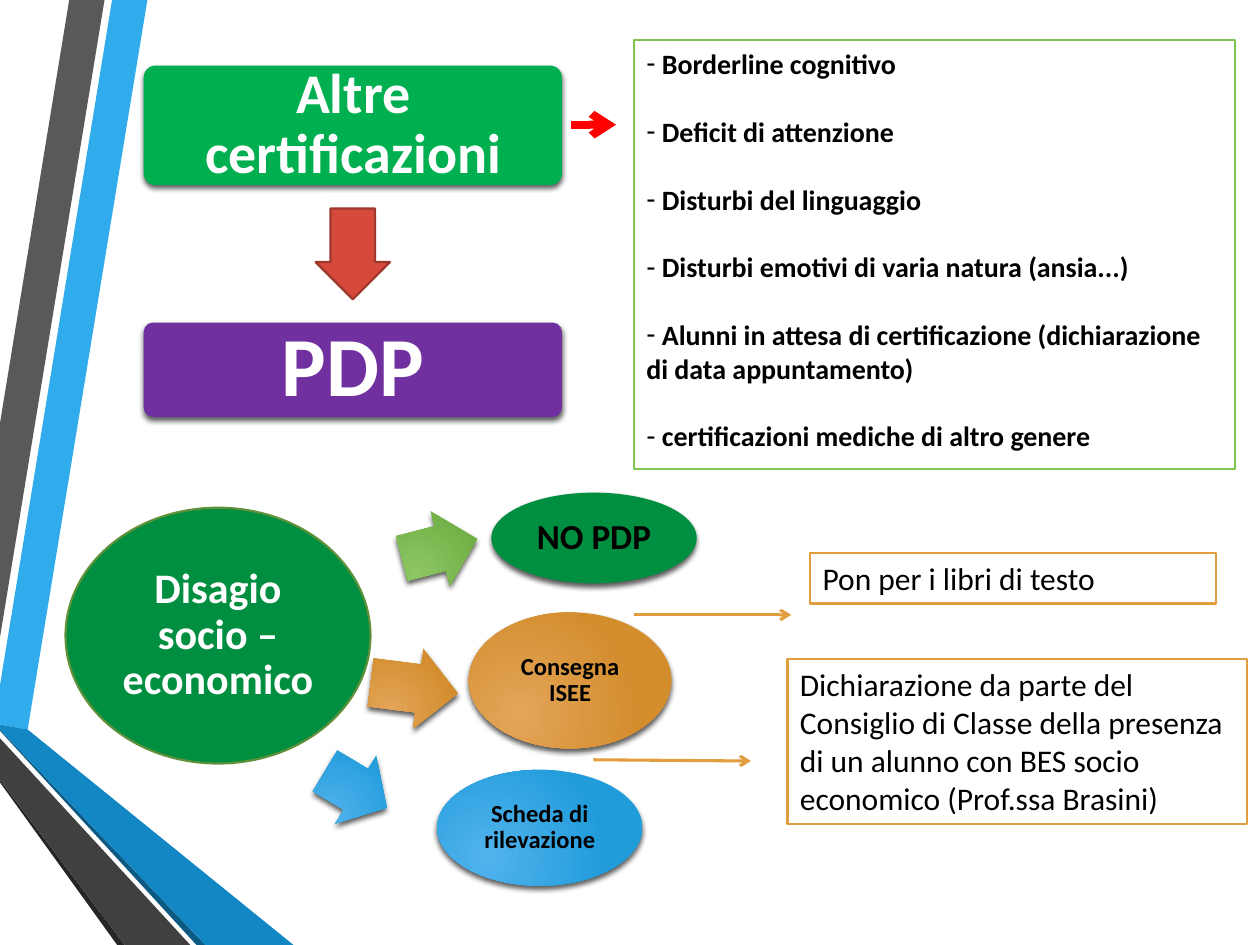
import lxml.etree
import pptx
import pptx.dml.color
import pptx.enum.shapes
import pptx.enum.text
import pptx.oxml
import pptx.oxml.ns
import pptx.util

Inches = pptx.util.Inches
Pt = pptx.util.Pt
RGBColor = pptx.dml.color.RGBColor
MSO_SHAPE = pptx.enum.shapes.MSO_SHAPE
PP_ALIGN = pptx.enum.text.PP_ALIGN
MSO_ANCHOR = pptx.enum.text.MSO_ANCHOR
qn = pptx.oxml.ns.qn
NS = pptx.oxml.ns.nsdecls("a")

BLACK = RGBColor(0x00, 0x00, 0x00)
WHITE = RGBColor(0xFF, 0xFF, 0xFF)
GREEN = RGBColor(0x00, 0xB0, 0x50)
DARK_GREEN = RGBColor(0x00, 0x8E, 0x40)
OLIVE = RGBColor(0x5F, 0x90, 0x3A)
LIME = RGBColor(0x80, 0xC3, 0x4F)
PURPLE = RGBColor(0x70, 0x30, 0xA0)
RED = RGBColor(0xFF, 0x00, 0x00)
BRICK = RGBColor(0xD6, 0x4A, 0x3B)
DARK_BRICK = RGBColor(0x9E, 0x37, 0x2C)
AMBER = RGBColor(0xE2, 0x9D, 0x3E)
SKY = RGBColor(0x30, 0xAC, 0xEC)
BLUE = RGBColor(0x12, 0x87, 0xC3)
NAVY = RGBColor(0x0C, 0x5A, 0x82)
GRAY = RGBColor(0x59, 0x59, 0x59)
DARK_GRAY = RGBColor(0x40, 0x40, 0x40)
CHARCOAL = RGBColor(0x26, 0x26, 0x26)
GREEN_FADE = [RGBColor(0x8C, 0xC7, 0x64), RGBColor(0x72, 0xAF, 0x45)]
AMBER_FADE = [RGBColor(0xE4, 0xA5, 0x59), RGBColor(0xD3, 0x8D, 0x2D)]
BLUE_FADE = [RGBColor(0x51, 0xB3, 0xED), RGBColor(0x21, 0x9C, 0xDB)]


def write(sp, text, size=18, color=BLACK, bold=False, align=PP_ALIGN.CENTER,
          anchor=MSO_ANCHOR.MIDDLE, spacing=0.9, before=0, inset=(0.03, 0.03), bullet=None):
    """Fill a shape with one paragraph per line of text."""
    tf = sp.text_frame
    tf.word_wrap = True
    tf.auto_size = pptx.enum.text.MSO_AUTO_SIZE.NONE
    tf.vertical_anchor = anchor
    tf.margin_left = tf.margin_right = Inches(inset[0])
    tf.margin_top = tf.margin_bottom = Inches(inset[1])
    for i, line in enumerate(text.split("\n")):
        p = tf.paragraphs[0] if i == 0 else tf.add_paragraph()
        p.alignment, p.line_spacing = align, spacing
        p.space_before, p.space_after = Pt(before if i else 0), Pt(0)
        if bullet:
            pPr = p._p.get_or_add_pPr()
            pPr.set("marL", "0")
            pPr.set("indent", "0")
            lxml.etree.SubElement(pPr, qn("a:buChar"), char=bullet)
        r = p.add_run()
        r.text = line
        r.font.name, r.font.size, r.font.bold = "Calibri", Pt(size), bold
        r.font.color.rgb = color


def paint(sp, fill, line=None, shadow=False):
    """Set a plain or two-colour fill, an outline and a soft shadow."""
    if isinstance(fill, list):
        sp.fill.gradient()
        for stop, color in zip(sp.fill.gradient_stops, fill):
            stop.color.rgb = color
        grad = sp._element.spPr.find(qn("a:gradFill"))
        grad.replace(grad.find(qn("a:lin")), pptx.oxml.parse_xml(
            f'<a:path {NS} path="circle"><a:fillToRect l="50000" t="100000" '
            'r="100000" b="50000"/></a:path>'))
    else:
        sp.fill.solid()
        sp.fill.fore_color.rgb = fill
    if line is None:
        sp.line.fill.background()
    else:
        sp.line.color.rgb = line
        sp.line.width = Pt(1.25)
    sp.shadow.inherit = False
    if shadow:
        sp._element.spPr.find(qn("a:effectLst")).append(pptx.oxml.parse_xml(
            f'<a:outerShdw {NS} blurRad="38100" dist="25400" dir="5400000" rotWithShape="0">'
            '<a:srgbClr val="000000"><a:alpha val="64000"/></a:srgbClr></a:outerShdw>'))


prs = pptx.Presentation()
prs.slide_width, prs.slide_height = Inches(10), Inches(7.5)
s = prs.slides.add_slide(prs.slide_layouts[1])
title, body = s.placeholders[0], s.placeholders[1]

# Ribbons along the left edge
ribbons = [
    (SKY, [(0, 5.44), (0, 5.75), (0.22, 5.79), (1.17, 0), (0.89, 0)]),
    (GRAY, [(0.83, 0), (0.55, 0), (0, 3.36), (0, 5.06)]),
    (CHARCOAL, [(0, 6.19), (0, 6.21), (0.93, 7.5), (0.99, 7.5)]),
    (NAVY, [(0, 5.79), (0, 5.8), (1.56, 7.5), (1.63, 7.5)]),
    (BLUE, [(0, 5.79), (1.63, 7.5), (2.33, 7.5), (0.22, 5.79), (0, 5.75)]),
    (DARK_GRAY, [(0, 6.19), (0.99, 7.5), (1.51, 7.5), (0, 5.86)]),
]
for color, points in ribbons:
    corners = [(Inches(x), Inches(y)) for x, y in points]
    builder = s.shapes.build_freeform(*corners[0])
    builder.add_line_segments(corners[1:], close=True)
    paint(builder.convert_to_shape(), color)

# Shapes: kind, box, rotation, fill, outline, shadow, text, text format
BAR, OVAL, ARROW, RECT = (MSO_SHAPE.ROUNDED_RECTANGLE, MSO_SHAPE.OVAL,
                          MSO_SHAPE.RIGHT_ARROW, MSO_SHAPE.RECTANGLE)
label = dict(size=14, bold=True, inset=(0.02, 0.02))
note = dict(align=PP_ALIGN.LEFT, anchor=MSO_ANCHOR.TOP, spacing=1.0, inset=(0.1, 0.05))
shapes = [
    (BAR, (1.14, 0.52, 3.32, 0.95), 0, GREEN, None, True, "", {}),
    (ARROW, (2.44, 1.72, 0.72, 0.59), 90, BRICK, DARK_BRICK, False, "", {}),
    (BAR, (1.14, 2.56, 3.32, 0.75), 0, PURPLE, None, True, "PDP",
     dict(size=48, color=WHITE, bold=True, inset=(0.2, 0.2))),
    (OVAL, (0.52, 4.03, 2.42, 2.03), 0, DARK_GREEN, OLIVE, False,
     "Disagio socio –economico", dict(size=24, color=WHITE, bold=True)),
    (ARROW, (3.18, 4.05, 0.62, 0.61), 345.4, GREEN_FADE, None, True, "", {}),
    (OVAL, (3.9, 3.91, 1.63, 0.72), 0, DARK_GREEN, None, True, "NO PDP",
     dict(size=20, bold=True)),
    (ARROW, (2.54, 5.95, 0.57, 0.63), 30.9, BLUE_FADE, None, True, "", {}),
    (OVAL, (3.47, 6.11, 1.63, 0.92), 0, BLUE_FADE, None, True, "Scheda di rilevazione", label),
    (ARROW, (2.94, 5.14, 0.7, 0.64), 7.2, AMBER_FADE, None, True, "", {}),
    (OVAL, (3.72, 4.86, 1.61, 1.08), 0, AMBER_FADE, None, True, "Consegna ISEE", label),
    (RECT, (6.25, 5.23, 3.65, 1.31), 0, WHITE, AMBER, False,
     "Dichiarazione da parte del Consiglio di Classe della presenza di un alunno "
     "con BES socio economico (Prof.ssa Brasini)", note),
    (RECT, (6.43, 4.39, 3.22, 0.4), 0, WHITE, AMBER, False, "Pon per i libri di testo", note),
]
for kind, box, rotation, fill, line, shadow, text, fmt in shapes:
    sp = s.shapes.add_shape(kind, *map(Inches, box))
    sp.rotation = rotation
    if kind == BAR:
        sp.adjustments[0] = 0.1
    elif kind == ARROW:
        sp.adjustments[0], sp.adjustments[1] = 0.6, 0.5
    paint(sp, fill, line, shadow)
    if text:
        write(sp, text, **fmt)

# Title on the green bar, brought to the front
title.left, title.top, title.width, title.height = map(Inches, (1.17, 0.55, 3.27, 0.89))
write(title, "Altre certificazioni", size=32, color=WHITE, bold=True, inset=(0.13, 0.13))
s.shapes._spTree.append(title._element)

# List of certifications
body.left, body.top, body.width, body.height = map(Inches, (5.03, 0.32, 4.77, 3.4))
paint(body, WHITE, LIME)
items = [" Borderline cognitivo", " Deficit di attenzione", " Disturbi del linguaggio",
         " Disturbi emotivi di varia natura (ansia...)",
         " Alunni in attesa di certificazione (dichiarazione di data appuntamento)",
         " certificazioni mediche di altro genere"]
write(body, "\n".join(items), size=16, bold=True, before=19.5, bullet="-", **note)

# Thin arrows
for x1, y1, x2, y2, color, width in [
    (4.53, 0.99, 4.89, 0.99, RED, 4.5),
    (4.71, 6.03, 5.96, 6.04, AMBER, 1.75),
    (5.03, 4.88, 6.28, 4.88, AMBER, 1.75),
]:
    c = s.shapes.add_connector(pptx.enum.shapes.MSO_CONNECTOR.STRAIGHT,
                               *map(Inches, (x1, y1, x2, y2)))
    c.line.color.rgb = color
    c.line.width = Pt(width)
    spPr = c._element.spPr
    lxml.etree.SubElement(spPr.find(qn("a:ln")), qn("a:tailEnd"), type="arrow")
    lxml.etree.SubElement(spPr, qn("a:effectLst"))

prs.save("out.pptx")
